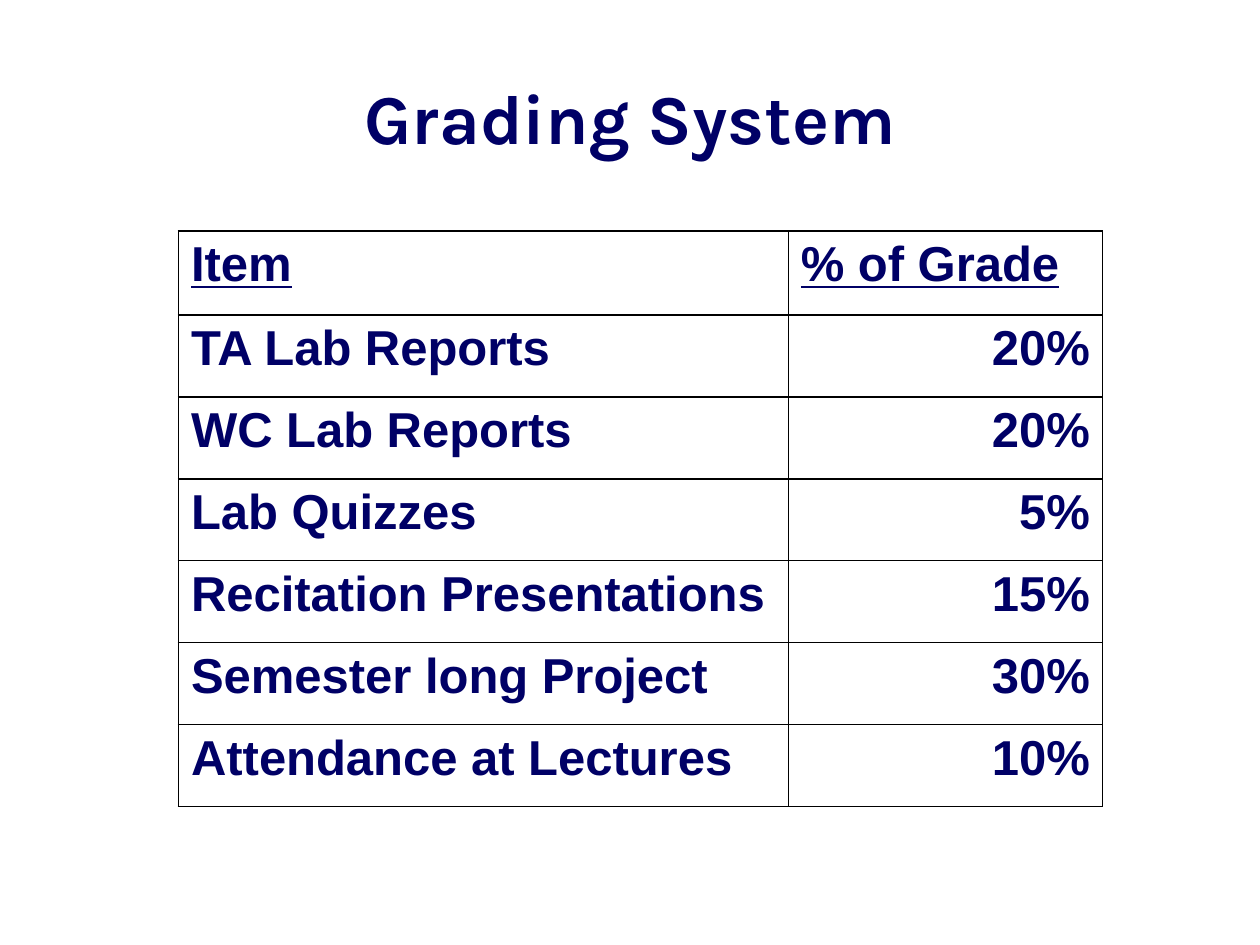
from lxml import etree
from pptx import Presentation
from pptx.dml.color import RGBColor
from pptx.enum import text
from pptx.oxml import ns
from pptx.util import Pt

COLORS = {"ink": "000066", "rule": "000000", "paper": "FFFFFF"}
HEADERS = ("Item", "% of Grade")
GRADES = (
    ("TA Lab Reports", "20%"),
    ("WC Lab Reports", "20%"),
    ("Lab Quizzes", "5%"),
    ("Recitation Presentations", "15%"),
    ("Semester long Project", "30%"),
    ("Attendance at Lectures", "10%"),
)


def set_font(p, name, size):
    """Give a paragraph the bold ink-coloured font."""
    p.font.name = name
    p.font.size = Pt(size)
    p.font.bold = True
    p.font.color.rgb = RGBColor.from_string(COLORS["ink"])


def add_borders(cell, width):
    """Rule all four sides of a cell."""
    tcPr = cell._tc.get_or_add_tcPr()
    for i, side in enumerate(("lnL", "lnR", "lnT", "lnB")):
        ln = etree.Element(ns.qn("a:" + side), w=str(Pt(width)))
        fill = etree.SubElement(ln, ns.qn("a:solidFill"))
        etree.SubElement(fill, ns.qn("a:srgbClr"), val=COLORS["rule"])
        tcPr.insert(i, ln)


def fill_cell(cell, content, is_header, is_number):
    """Write one table cell with its fill, borders and text."""
    cell.fill.solid()
    cell.fill.fore_color.rgb = RGBColor.from_string(COLORS["paper"])
    add_borders(cell, 1)
    cell.text = content
    p = cell.text_frame.paragraphs[0]
    pPr = p._p.get_or_add_pPr()
    pPr.set("marL", str(Pt(27)))
    pPr.set("indent", str(Pt(-27)))
    if is_number:
        p.alignment = text.PP_ALIGN.RIGHT
    set_font(p, "Arial", 28)
    p.font.underline = is_header


def place_title(s, left, top, width, height):
    """Move and format the title placeholder."""
    sp = s.shapes.title
    sp.left, sp.top, sp.width, sp.height = map(Pt, (left, top, width, height))
    tf = sp.text_frame
    tf.text = "Grading System"
    tf.vertical_anchor = text.MSO_ANCHOR.MIDDLE
    p = tf.paragraphs[0]
    p.alignment = text.PP_ALIGN.CENTER
    set_font(p, "Karla", 40)


def add_grades(s, left, top, width, height):
    """Add the grade table, with a slightly taller header row."""
    rows = (HEADERS, *GRADES)
    row_height = 46.8
    table = s.shapes.add_table(
        len(rows), len(HEADERS), *map(Pt, (left, top, width, height))
    ).table
    table.columns[0].width = Pt(width * 0.66)
    table.columns[1].width = Pt(width * 0.34)
    for r, row in enumerate(rows):
        is_header = r == 0
        table.rows[r].height = Pt(
            height - row_height * len(GRADES) if is_header else row_height
        )
        for c, content in enumerate(row):
            fill_cell(table.cell(r, c), content, is_header, c == 1 and not is_header)


def main():
    """Build the grading slide."""
    prs = Presentation()
    prs.slide_width, prs.slide_height = Pt(720), Pt(540)
    s = prs.slides.add_slide(prs.slide_layouts[5])
    place_title(s, 36, 21.6, 648, 90)
    add_grades(s, 102, 132, 528, 328.8)
    prs.save("out.pptx")


if __name__ == "__main__":
    main()
